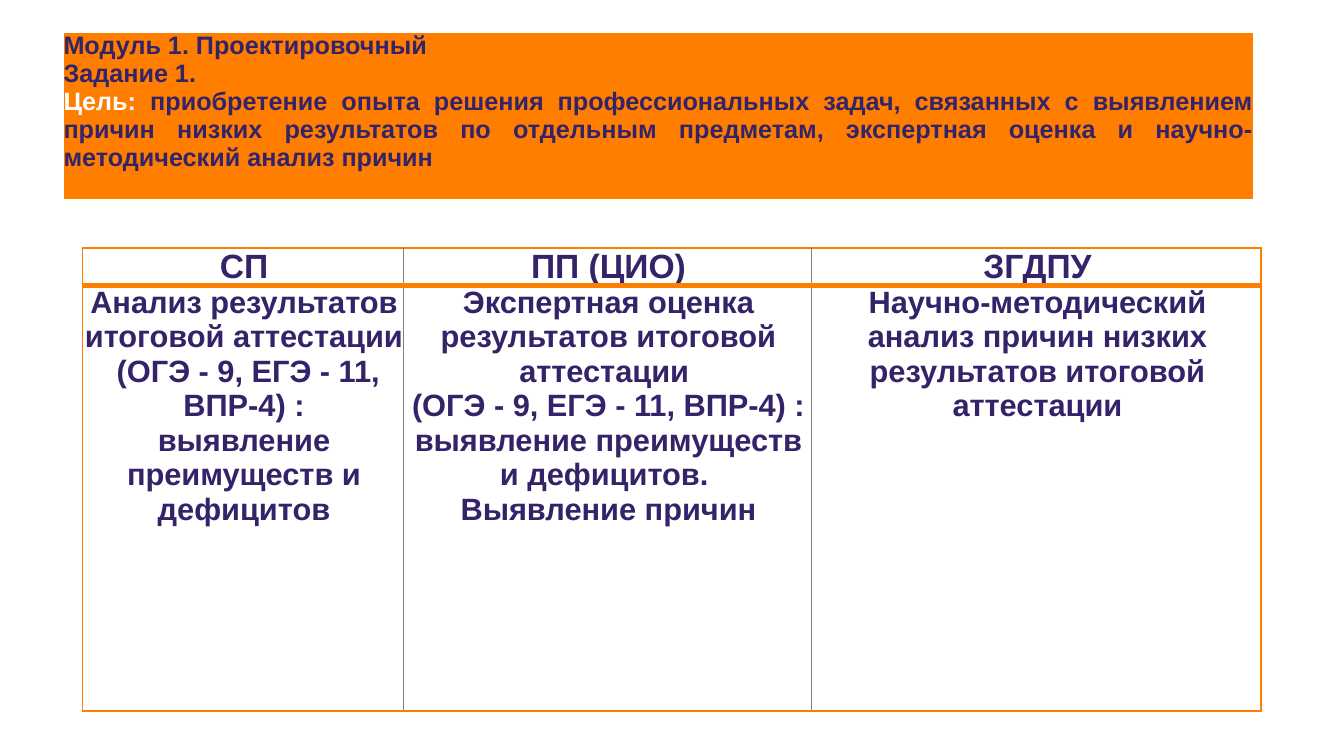
"""Builds the slide on the goal and the partners' tasks of module 1."""
from lxml.etree import SubElement
from pptx import Presentation
from pptx.dml.color import RGBColor
from pptx.enum.text import PP_ALIGN
from pptx.oxml.ns import qn
from pptx.util import Inches, Pt

WIDTH, HEIGHT = 13.33, 7.5
ORANGE, INK, WHITE, GREY = "FF7E00", "35236A", "FFFFFF", "808080"
PLAIN_STYLE = "{2D5ABB26-0587-4C30-8999-92F81FD0307C}"

GOAL = [
    [("Модуль 1. Проектировочный", INK)],
    [("Задание 1. ", INK)],
    [("Цель: ", WHITE),
     ("приобретение опыта решения профессиональных задач, связанных с "
      "выявлением причин низких результатов по отдельным предметам, "
      "экспертная оценка и научно-методический анализ причин", INK)],
]
PARTNERS = {
    "СП": ["Анализ результатов итоговой аттестации\v (ОГЭ - 9, ЕГЭ - 11, ВПР-4) :",
           "выявление преимуществ и дефицитов"],
    "ПП (ЦИО)": ["Экспертная оценка",
                 "результатов итоговой аттестации \v(ОГЭ - 9, ЕГЭ - 11, ВПР-4) :",
                 "выявление преимуществ и дефицитов. ",
                 "Выявление причин"],
    "ЗГДПУ": ["Научно-методический анализ причин низких результатов итоговой аттестации"],
}


def color(value):
    """Turn a hex string into a colour."""
    return RGBColor.from_string(value)


def add_grid(s, left, top, cols, rows):
    """Add an unstyled table with the given column widths and row heights."""
    shape = s.shapes.add_table(len(rows), len(cols), Inches(left), Inches(top),
                               Inches(sum(cols)), Inches(sum(rows)))
    table = shape.table
    table.first_row = table.horz_banding = False
    shape._element.find(".//" + qn("a:tableStyleId")).text = PLAIN_STYLE
    for column, width in zip(table.columns, cols):
        column.width = Inches(width)
    for row, height in zip(table.rows, rows):
        row.height = Inches(height)
    return table


def set_borders(cell, **sides):
    """Draw the borders L, R, T and B, each given as colour and points."""
    tcPr = cell._tc.get_or_add_tcPr()
    for side in "LRTB":
        value, width = sides[side]
        ln = SubElement(tcPr, qn(f"a:ln{side}"), w=str(Pt(width)))
        fill = SubElement(ln, qn("a:solidFill"))
        SubElement(fill, qn("a:srgbClr"), val=value)


def fill_cell(cell, paragraphs, size, align, indent=0):
    """Write paragraphs of coloured runs into a cell without margins."""
    cell.margin_left = cell.margin_right = cell.margin_top = cell.margin_bottom = 0
    tf = cell.text_frame
    for i, runs in enumerate(paragraphs):
        p = tf.add_paragraph() if i else tf.paragraphs[0]
        p.alignment = align
        p.font.size, p.font.name, p.font.bold = Pt(size), "Arial", True
        p._p.get_or_add_pPr().set("marL", str(Inches(indent)))
        for text, value in runs:
            for j, line in enumerate(text.split("\v")):
                if j:
                    p.add_line_break()
                r = p.add_run()
                r.text = line
                r.font.size, r.font.name, r.font.bold = Pt(size), "Arial", True
                r.font.color.rgb = color(value)


def add_goal(s):
    """Add the orange banner with the goal."""
    cell = add_grid(s, 0.63, 0.31, [11.8], [1.68]).cell(0, 0)
    set_borders(cell, L=(WHITE, 1), R=(WHITE, 1), T=(WHITE, 3), B=(WHITE, 3))
    cell.fill.solid()
    cell.fill.fore_color.rgb = color(ORANGE)
    fill_cell(cell, GOAL, 18, PP_ALIGN.JUSTIFY)


def add_partners(s):
    """Add the table of the partners and their tasks."""
    table = add_grid(s, 0.82, 2.46, [3.18, 4.05, 4.46], [0.37, 4.22])
    last = len(PARTNERS) - 1
    outer, inner, rule = (ORANGE, 1), (GREY, 0.5), (ORANGE, 4)
    for col, (name, tasks) in enumerate(PARTNERS.items()):
        for row, (lines, size) in enumerate([([name], 24), (tasks, 22)]):
            cell = table.cell(row, col)
            set_borders(cell,
                        L=inner if col else outer,
                        R=inner if col < last else (ORANGE, 1.5),
                        T=rule if row else outer,
                        B=(ORANGE, 1.5) if row else rule)
            cell.fill.background()
            fill_cell(cell, [[(line, INK)] for line in lines], size,
                      PP_ALIGN.CENTER, 0.02)


def main():
    """Build and save the slide."""
    prs = Presentation()
    prs.slide_width, prs.slide_height = Inches(WIDTH), Inches(HEIGHT)
    s = prs.slides.add_slide(prs.slide_layouts[6])
    add_partners(s)
    add_goal(s)
    prs.save("out.pptx")


if __name__ == "__main__":
    main()
